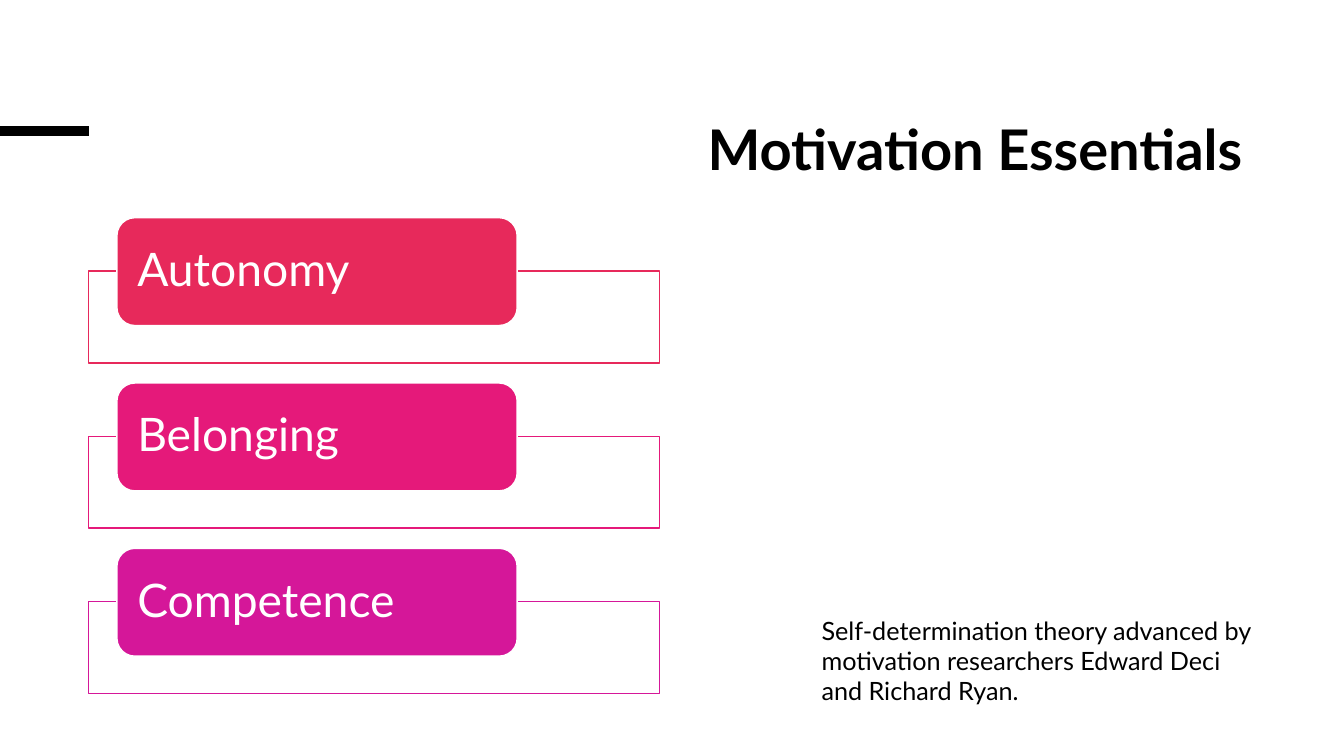
"""Build the Motivation Essentials slide."""
from lxml import etree
from pptx import Presentation
from pptx.dml.color import RGBColor
from pptx.enum.shapes import MSO_CONNECTOR, MSO_SHAPE
from pptx.enum.text import MSO_ANCHOR, PP_ALIGN
from pptx.oxml.ns import qn
from pptx.util import Inches, Pt

RECT, ROUNDED = MSO_SHAPE.RECTANGLE, MSO_SHAPE.ROUNDED_RECTANGLE
STRAIGHT = MSO_CONNECTOR.STRAIGHT
TOP, MIDDLE = MSO_ANCHOR.TOP, MSO_ANCHOR.MIDDLE
LEFT, RIGHT = PP_ALIGN.LEFT, PP_ALIGN.RIGHT
COLORS = {
    "white": "FFFFFF",
    "black": "000000",
    "Autonomy": "E7295B",
    "Belonging": "E5197A",
    "Competence": "D51799",
}
FIRST_TOP, PITCH = 2.16, 1.64


def add_box(kind, x, y, w, h, fill, line):
    sp = s.shapes.add_shape(kind, Inches(x), Inches(y), Inches(w), Inches(h))
    sp.shadow.inherit = False
    sp.fill.solid()
    sp.fill.fore_color.rgb = RGBColor.from_string(COLORS[fill])
    sp.line.color.rgb = RGBColor.from_string(COLORS[line])
    sp.line.width = Pt(1)
    return sp


def write(sp, text, size, color, align=LEFT, anchor=TOP, spacing=1.0, bold=False):
    tf = sp.text_frame
    tf.word_wrap = True
    tf.vertical_anchor = anchor
    p = tf.paragraphs[0]
    p.text = text
    p.alignment = align
    p.line_spacing = spacing
    p.font.name = "Lato"
    p.font.size = Pt(size)
    p.font.bold = bold
    p.font.color.rgb = RGBColor.from_string(COLORS[color])
    return tf


prs = Presentation()
prs.slide_width, prs.slide_height = Inches(13.33), Inches(7.5)
s = prs.slides.add_slide(prs.slide_layouts[6])
s.background.fill.solid()
s.background.fill.fore_color.rgb = RGBColor.from_string(COLORS["white"])

title = s.shapes.add_textbox(Inches(1.19), Inches(1.19), Inches(11.23), Inches(1.3))
write(title, "Motivation Essentials", 40, "black", align=RIGHT, spacing=0.85, bold=True)

accent = s.shapes.add_connector(STRAIGHT, Inches(0), Inches(1.3), Inches(0.88), Inches(1.3))
accent.line.color.rgb = RGBColor.from_string(COLORS["black"])
accent.line.width = Pt(6.75)
etree.SubElement(accent._element.spPr, qn("a:effectLst"))

for i, need in enumerate(("Autonomy", "Belonging", "Competence")):
    top = FIRST_TOP + i * PITCH
    add_box(RECT, 0.88, top + 0.53, 5.66, 0.91, "white", need)
    label = add_box(ROUNDED, 1.16, top, 3.97, 1.07, need, "white")
    tf = write(label, need, 33, "white", anchor=MIDDLE, spacing=0.9)
    tf.margin_left = tf.margin_right = Inches(0.15)
    tf.margin_top = tf.margin_bottom = 0

caption = s.shapes.add_textbox(Inches(8.05), Inches(6.05), Inches(4.46), Inches(1.01))
write(
    caption,
    "Self-determination theory advanced by motivation researchers "
    "Edward Deci and Richard Ryan.",
    18,
    "black",
)

prs.save("out.pptx")
